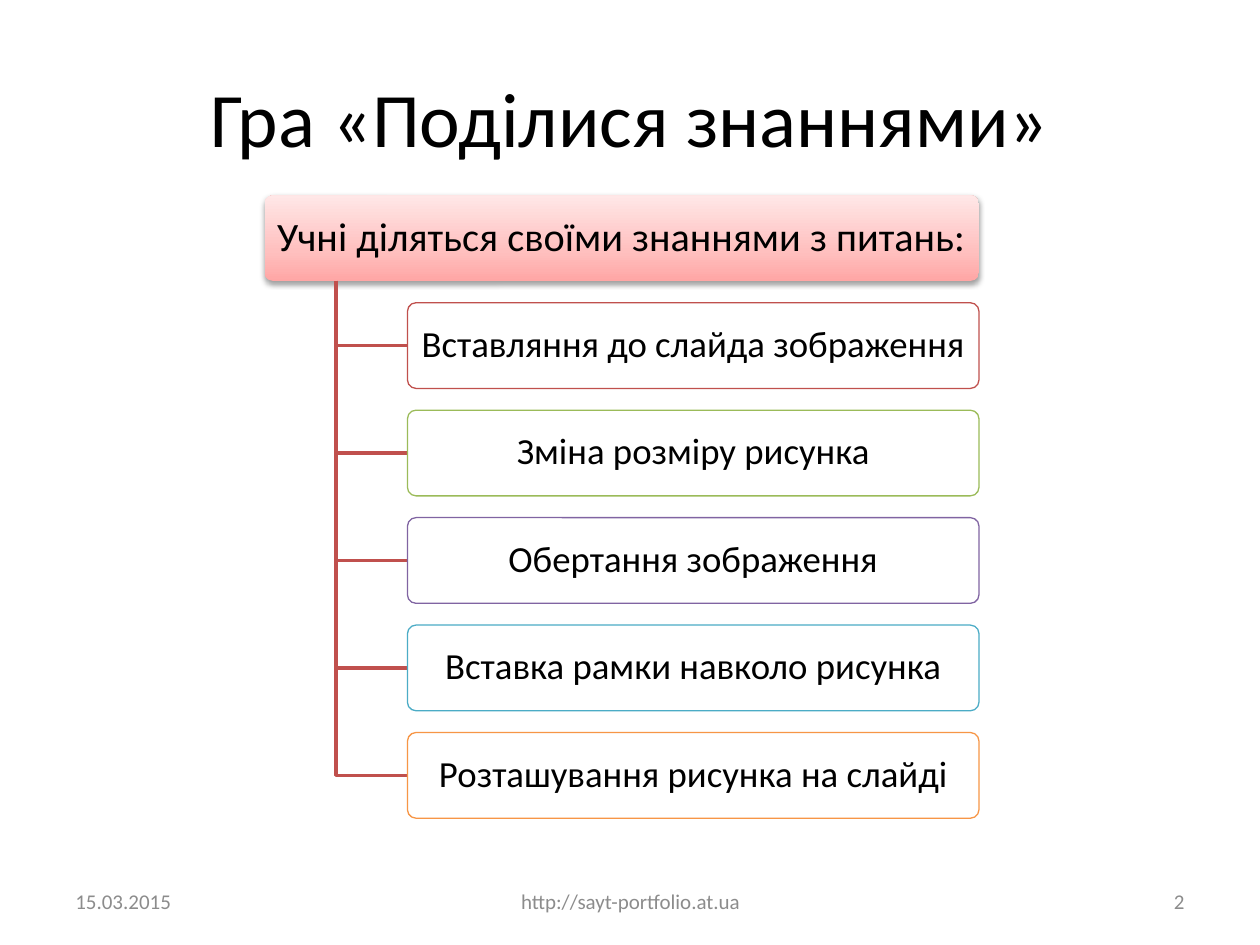
from dataclasses import dataclass

from lxml import etree
from pptx import Presentation
from pptx import util as u
from pptx.dml.color import RGBColor
from pptx.enum import shapes, text
from pptx.oxml.ns import qn


@dataclass(frozen=True)
class Theme:
    font: str = "Calibri"
    ink: str = "000000"
    paper: str = "FFFFFF"
    muted: str = "8C8C8C"
    stem: str = "C0504D"
    grad: tuple = ((0, "FFA6A5"), (35, "FFC0BF"), (100, "FFE7E7"))
    title: int = 44
    head: int = 23
    item: int = 21
    foot: int = 12


@dataclass(frozen=True)
class Box:
    x: float
    y: float
    w: float
    h: float

    @property
    def mid(self) -> float:
        return self.y + self.h / 2

    def place(self) -> list:
        return [u.Inches(v) for v in (self.x, self.y, self.w, self.h)]


@dataclass(frozen=True)
class Item:
    label: str
    color: str


THEME = Theme()
WIDE, HIGH = 10, 7.5
LEFT, MID, RIGHT = text.PP_ALIGN.LEFT, text.PP_ALIGN.CENTER, text.PP_ALIGN.RIGHT

# Tree grid: the header is row 0, the items fill the rows below
HEAD = Box(2.1, 1.55, 5.67, 0.68)
PITCH = HEAD.h * 1.254
STEM = HEAD.x + HEAD.w * 0.1
INDENT = HEAD.w * 0.2

ITEMS = [
    Item("Вставляння до слайда зображення", "C0504D"),
    Item("Зміна розміру рисунка", "9BBB59"),
    Item("Обертання зображення", "8064A2"),
    Item("Вставка рамки навколо рисунка", "4BACC6"),
    Item("Розташування рисунка на слайді", "F79646"),
]


def rgb(code: str) -> RGBColor:
    return RGBColor.from_string(code)


def write(shape, words: str, *, size: float, color: str = THEME.ink,
          align=MID, pad: tuple = (0.1, 0.05), lead: float = 1.0) -> None:
    frame = shape.text_frame
    frame.word_wrap = True
    frame.vertical_anchor = text.MSO_ANCHOR.MIDDLE
    frame.margin_left = frame.margin_right = u.Inches(pad[0])
    frame.margin_top = frame.margin_bottom = u.Inches(pad[1])
    para = frame.paragraphs[0]
    para.alignment, para.line_spacing = align, lead
    run = para.add_run()
    run.text = words
    run.font.name, run.font.size = THEME.font, u.Pt(size)
    run.font.color.rgb = rgb(color)


def card(slide, box: Box):
    shape = slide.shapes.add_shape(
        shapes.MSO_SHAPE.ROUNDED_RECTANGLE, *box.place())
    shape.adjustments[0] = 0.1
    shape.shadow.inherit = False
    return shape


def tint(parent, tag: str, code: str, alpha: int | None = None, **attrs) -> None:
    """Add an element that holds one colour."""
    node = etree.SubElement(parent, qn(tag), **attrs)
    color = etree.SubElement(node, qn("a:srgbClr"), val=code)
    if alpha is not None:
        etree.SubElement(color, qn("a:alpha"), val=str(alpha * 1000))


def header(slide, words: str) -> None:
    shape = card(slide, HEAD)
    shape.line.fill.background()
    shape.fill.gradient()
    shape.fill.gradient_angle = 90
    props = shape._element.spPr
    stops = props.find(".//" + qn("a:gsLst"))
    for stop in list(stops):
        stops.remove(stop)
    for pos, code in THEME.grad:
        tint(stops, "a:gs", code, pos=str(pos * 1000))
    tint(props.find(qn("a:effectLst")), "a:outerShdw", THEME.ink, 38,
         blurRad=str(u.Pt(3.1)), dist=str(u.Pt(1.6)), dir="5400000",
         rotWithShape="0")
    write(shape, words, size=THEME.head, pad=(0.07, 0.05), lead=0.9)


def branch(slide, box: Box) -> None:
    foot = HEAD.y + HEAD.h
    points = [(u.Inches(x), u.Inches(y))
              for x, y in ((STEM, foot), (STEM, box.mid), (box.x, box.mid))]
    path = slide.shapes.build_freeform(*points[0])
    path.add_line_segments(points[1:], close=False)
    line = path.convert_to_shape()
    line.shadow.inherit = False
    line.fill.background()
    line.line.color.rgb, line.line.width = rgb(THEME.stem), u.Pt(2)


def entry(slide, row: int, item: Item) -> None:
    box = Box(HEAD.x + INDENT, HEAD.y + row * PITCH, HEAD.w - INDENT, HEAD.h)
    branch(slide, box)
    shape = card(slide, box)
    shape.fill.solid()
    shape.fill.fore_color.rgb = rgb(THEME.paper)
    color = shape._element.spPr.find(qn("a:solidFill"))[0]
    etree.SubElement(color, qn("a:alpha"), val="90000")
    shape.line.color.rgb, shape.line.width = rgb(item.color), u.Pt(0.75)
    write(shape, item.label, size=THEME.item, pad=(0.06, 0.05), lead=0.9)


def footer(slide, words: str, x: float, w: float, align) -> None:
    box = Box(x, 6.95, w, 0.4)
    write(slide.shapes.add_textbox(*box.place()), words,
          size=THEME.foot, color=THEME.muted, align=align)


def main() -> None:
    deck = Presentation()
    deck.slide_width, deck.slide_height = u.Inches(WIDE), u.Inches(HIGH)
    slide = deck.slides.add_slide(deck.slide_layouts[5])

    # Title
    title = slide.shapes.title
    title.left, title.top, title.width, title.height = Box(
        WIDE * 0.05, HIGH * 0.04, WIDE * 0.9, 1.25).place()
    write(title, "Гра «Поділися знаннями»", size=THEME.title)

    # Topic tree
    header(slide, "Учні діляться своїми знаннями з питань:")
    for row, item in enumerate(ITEMS, 1):
        entry(slide, row, item)

    # Footer
    footer(slide, "15.03.2015", 0.5, 2.33, LEFT)
    footer(slide, "http://sayt-portfolio.at.ua", 3.42, 3.17, MID)
    footer(slide, "2", 7.17, 2.33, RIGHT)

    deck.save("out.pptx")


if __name__ == "__main__":
    main()
